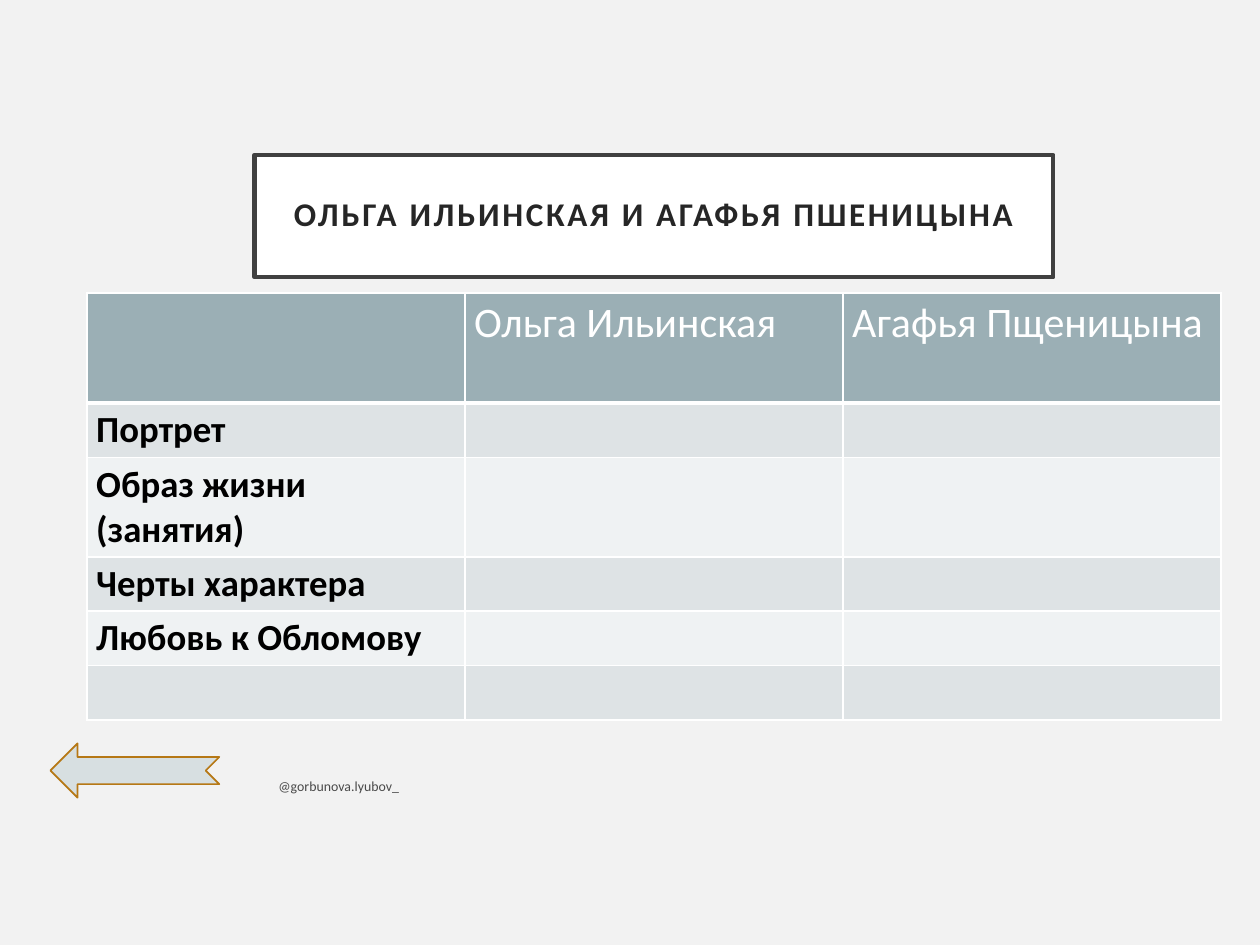
from lxml import etree
from pptx import Presentation
from pptx.dml.color import RGBColor
from pptx.enum.shapes import MSO_SHAPE
from pptx.enum.text import MSO_ANCHOR, MSO_AUTO_SIZE, PP_ALIGN
from pptx.oxml.ns import qn
from pptx.util import Pt

NOTCHED_ARROW = MSO_SHAPE.NOTCHED_RIGHT_ARROW
MIDDLE = MSO_ANCHOR.MIDDLE
NO_AUTOFIT = MSO_AUTO_SIZE.NONE
LEFT, CENTER = PP_ALIGN.LEFT, PP_ALIGN.CENTER

BACKGROUND = RGBColor(0xF2, 0xF2, 0xF2)
WHITE = RGBColor(0xFF, 0xFF, 0xFF)
BLACK = RGBColor(0x00, 0x00, 0x00)
TITLE_LINE = RGBColor(0x40, 0x40, 0x40)
TITLE_TEXT = RGBColor(0x26, 0x26, 0x26)
FOOTER_TEXT = RGBColor(0x49, 0x49, 0x49)
HEADER_FILL = RGBColor(0x9B, 0xAF, 0xB5)
BAND_FILLS = [RGBColor(0xDE, 0xE3, 0xE5), RGBColor(0xEF, 0xF2, 0xF3)]
ARROW_FILL = RGBColor(0xD7, 0xDF, 0xE1)
ARROW_LINE = RGBColor(0xB6, 0x78, 0x15)


def write_text(frame, text, size, color, bold=False, align=LEFT, line_spacing=1, letter_spacing=0):
    paragraph = frame.paragraphs[0]
    paragraph.alignment = align
    paragraph.line_spacing = line_spacing
    run = paragraph.add_run()
    run.text = text
    run.font.name = "Calibri"
    run.font.size = Pt(size)
    run.font.bold = bold
    run.font.color.rgb = color
    if letter_spacing:
        run.font._element.set("spc", str(int(letter_spacing * 100)))


def add_border(cell, side, width):
    line = etree.SubElement(cell._tc.get_or_add_tcPr(), qn(f"a:ln{side}"), w=str(Pt(width)))
    fill = etree.SubElement(line, qn("a:solidFill"))
    etree.SubElement(fill, qn("a:srgbClr"), val=str(WHITE))


presentation = Presentation()
presentation.slide_width = Pt(720)
presentation.slide_height = Pt(540)
slide = presentation.slides.add_slide(presentation.slide_layouts[5])
slide.background.fill.solid()
slide.background.fill.fore_color.rgb = BACKGROUND

title = slide.shapes.title
title.left, title.top, title.width, title.height = Pt(145.4), Pt(88.6), Pt(456.5), Pt(69.8)
title.fill.solid()
title.fill.fore_color.rgb = WHITE
title.line.color.rgb = TITLE_LINE
title.line.width = Pt(2.5)
frame = title.text_frame
frame.auto_size = NO_AUTOFIT
frame.word_wrap = True
frame.vertical_anchor = MIDDLE
frame.margin_left = frame.margin_right = frame.margin_top = frame.margin_bottom = Pt(14.4)
write_text(frame, "ОЛЬГА ИЛЬИНСКАЯ И АГАФЬЯ ПШЕНИЦЫНА", size=18.9, color=TITLE_TEXT,
           bold=True, align=CENTER, line_spacing=0.9, letter_spacing=1.5)

rows = [
    ["", "Ольга Ильинская", "Агафья Пщеницына"],
    ["Портрет", "", ""],
    ["Образ жизни (занятия)", "", ""],
    ["Черты характера", "", ""],
    ["Любовь к Обломову", "", ""],
    ["", "", ""],
]
row_heights = [63, 31, 56.5, 31, 31, 31]
table = slide.shapes.add_table(len(rows), 3, Pt(49.6), Pt(167.3), Pt(648), Pt(sum(row_heights))).table
for row_index, texts in enumerate(rows):
    table.rows[row_index].height = Pt(row_heights[row_index])
    is_header = row_index == 0
    for column_index, text in enumerate(texts):
        cell = table.cell(row_index, column_index)
        cell.margin_left = cell.margin_right = Pt(5.4)
        cell.margin_top = cell.margin_bottom = Pt(2.7)
        for side in "LRTB":
            add_border(cell, side, width=3 if is_header and side == "B" else 1)
        cell.fill.solid()
        cell.fill.fore_color.rgb = HEADER_FILL if is_header else BAND_FILLS[(row_index - 1) % 2]
        if text:
            write_text(cell.text_frame, text, size=24 if is_header else 21,
                       color=WHITE if is_header else BLACK, bold=not is_header)

arrow = slide.shapes.add_shape(NOTCHED_ARROW, Pt(28.8), Pt(424.8), Pt(96.5), Pt(31))
arrow.rotation = 180
arrow.shadow.inherit = False
arrow.fill.solid()
arrow.fill.fore_color.rgb = ARROW_FILL
arrow.line.color.rgb = ARROW_LINE
arrow.line.width = Pt(1)

footer = slide.shapes.add_textbox(Pt(152), Pt(440), Pt(348.5), Pt(18.7))
footer.text_frame.word_wrap = True
footer.text_frame.vertical_anchor = MIDDLE
write_text(footer.text_frame, "@gorbunova.lyubov_", size=7.9, color=FOOTER_TEXT)

presentation.save("out.pptx")
